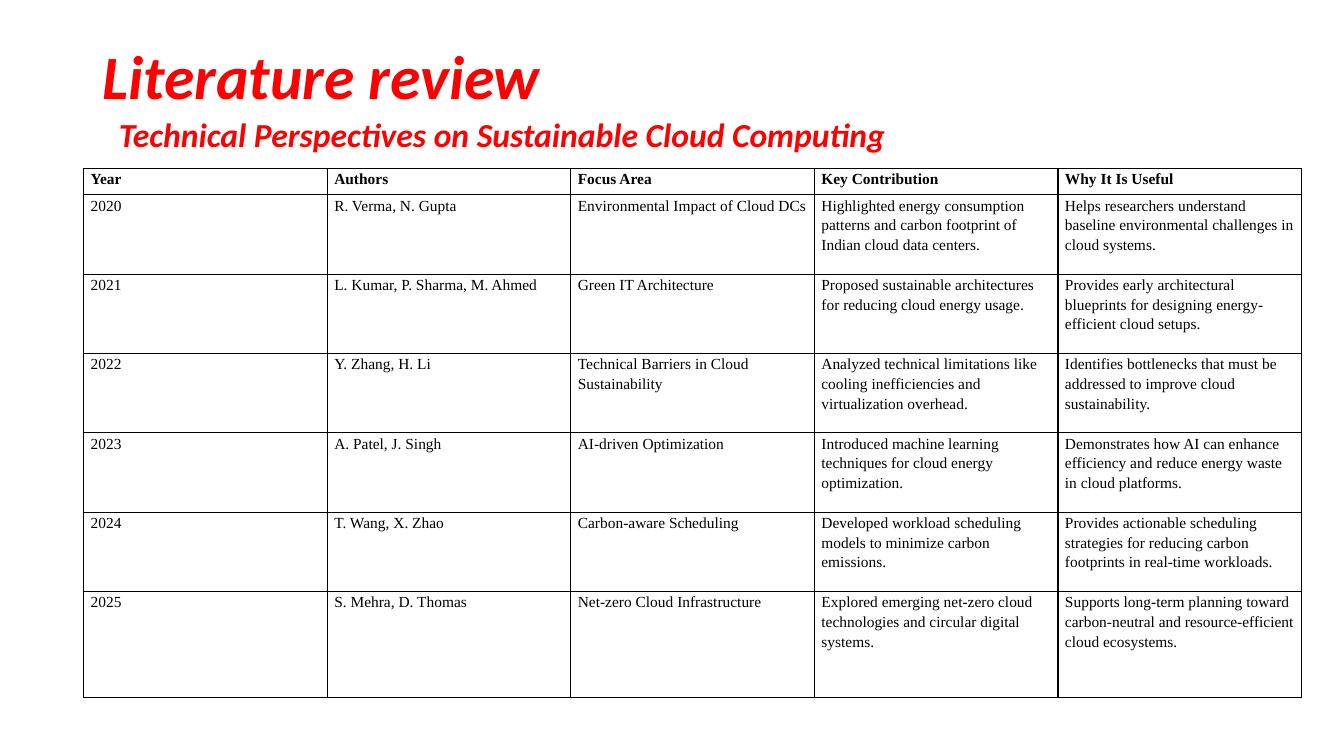
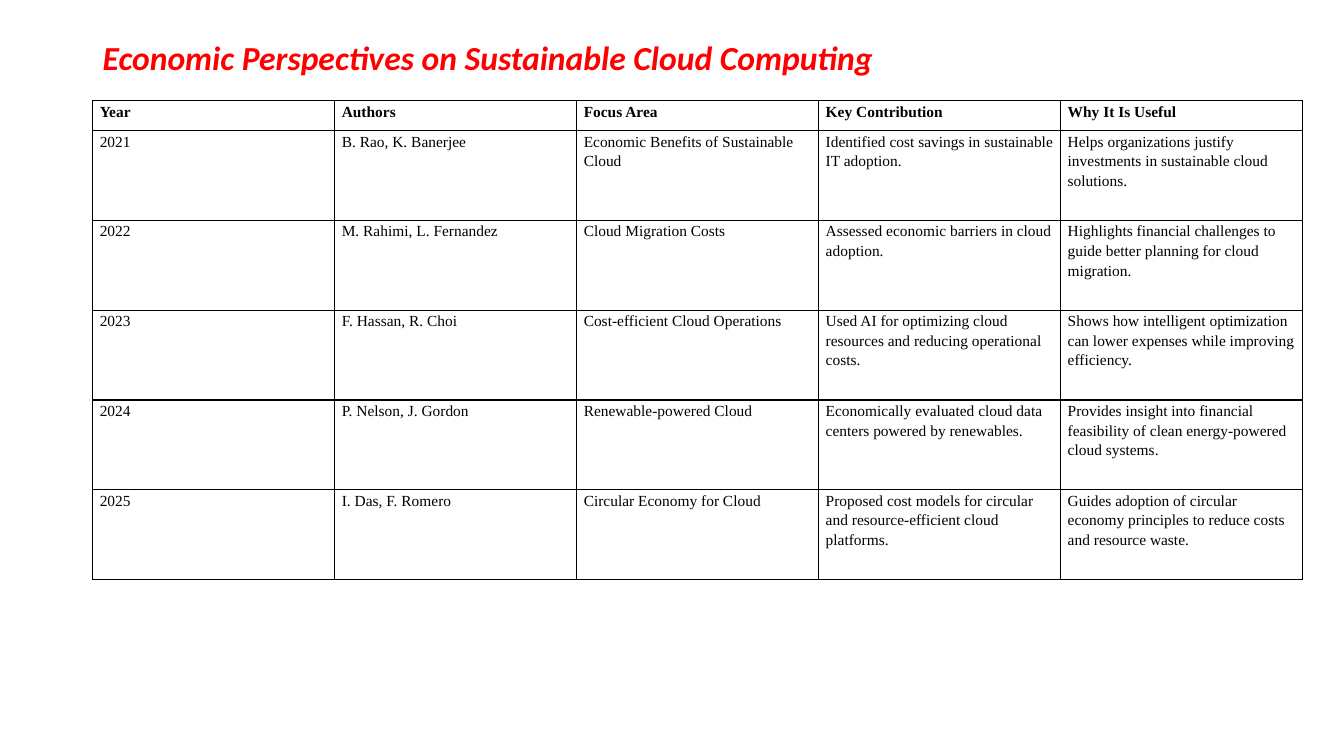
from lxml import etree
from pptx import Presentation
from pptx import util as u
from pptx.dml.color import RGBColor
from pptx.enum import text
from pptx.oxml.ns import qn

RED, BLACK, WHITE = "FF0000", "000000", "FFFFFF"
HEAD_FONT, BODY_FONT = "Calibri", "Times New Roman"
HEADER = ("Year", "Authors", "Focus Area", "Key Contribution", "Why It Is Useful")

TECHNICAL = [
    ("2020", "R. Verma, N. Gupta", "Environmental Impact of Cloud DCs",
     "Highlighted energy consumption patterns and carbon footprint of Indian cloud data centers.",
     "Helps researchers understand baseline environmental challenges in cloud systems."),
    ("2021", "L. Kumar, P. Sharma, M. Ahmed", "Green IT Architecture",
     "Proposed sustainable architectures for reducing cloud energy usage.",
     "Provides early architectural blueprints for designing energy-efficient cloud setups."),
    ("2022", "Y. Zhang, H. Li", "Technical Barriers in Cloud Sustainability",
     "Analyzed technical limitations like cooling inefficiencies and virtualization overhead.",
     "Identifies bottlenecks that must be addressed to improve cloud sustainability."),
    ("2023", "A. Patel, J. Singh", "AI-driven Optimization",
     "Introduced machine learning techniques for cloud energy optimization.",
     "Demonstrates how AI can enhance efficiency and reduce energy waste in cloud platforms."),
    ("2024", "T. Wang, X. Zhao", "Carbon-aware Scheduling",
     "Developed workload scheduling models to minimize carbon emissions.",
     "Provides actionable scheduling strategies for reducing carbon footprints in real-time workloads."),
    ("2025", "S. Mehra, D. Thomas", "Net-zero Cloud Infrastructure",
     "Explored emerging net-zero cloud technologies and circular digital systems.",
     "Supports long-term planning toward carbon-neutral and resource-efficient cloud ecosystems."),
]
ECONOMIC = [
    ("2021", "B. Rao, K. Banerjee", "Economic Benefits of Sustainable Cloud",
     "Identified cost savings in sustainable IT adoption.",
     "Helps organizations justify investments in sustainable cloud solutions."),
    ("2022", "M. Rahimi, L. Fernandez", "Cloud Migration Costs",
     "Assessed economic barriers in cloud adoption.",
     "Highlights financial challenges to guide better planning for cloud migration."),
    ("2023", "F. Hassan, R. Choi", "Cost-efficient Cloud Operations",
     "Used AI for optimizing cloud resources and reducing operational costs.",
     "Shows how intelligent optimization can lower expenses while improving efficiency."),
    ("2024", "P. Nelson, J. Gordon", "Renewable-powered Cloud",
     "Economically evaluated cloud data centers powered by renewables.",
     "Provides insight into financial feasibility of clean energy-powered cloud systems."),
    ("2025", "I. Das, F. Romero", "Circular Economy for Cloud",
     "Proposed cost models for circular and resource-efficient cloud platforms.",
     "Guides adoption of circular economy principles to reduce costs and resource waste."),
]


def rgb(color):
    return RGBColor.from_string(color)


def style(p, font, size, color, bold, italic=False, spacing=1.0):
    f = p.font
    f.name, f.size, f.bold, f.italic = font, u.Pt(size), bold, italic
    f.color.rgb = rgb(color)
    p.line_spacing = spacing


def heading(s, box, words, size, anchor=text.MSO_ANCHOR.MIDDLE, spacing=0.9):
    """Red bold italic heading inside box (left, top, width, height)."""
    tf = s.shapes.add_textbox(*map(u.Inches, box)).text_frame
    tf.word_wrap = True
    tf.vertical_anchor = anchor
    p = tf.paragraphs[0]
    p.text = words
    style(p, HEAD_FONT, size, RED, True, True, spacing)


def borders(cell, color, width):
    tcPr = cell._tc.get_or_add_tcPr()
    for side in ("lnL", "lnR", "lnT", "lnB"):
        ln = etree.SubElement(tcPr, qn("a:" + side), w=str(u.Pt(width)))
        fill = etree.SubElement(ln, qn("a:solidFill"))
        etree.SubElement(fill, qn("a:srgbClr"), val=color)


def review_table(s, box, records, shares):
    """Bordered table: equal columns, row heights in proportion to shares."""
    rows = [HEADER] + records
    x, y, w, h = map(u.Inches, box)
    table = s.shapes.add_table(len(rows), len(HEADER), x, y, w, h).table
    for col in table.columns:
        col.width = w // len(HEADER)
    for i, (row, share) in enumerate(zip(rows, shares)):
        table.rows[i].height = h * share // sum(shares)
        for j, words in enumerate(row):
            cell = table.cell(i, j)
            borders(cell, BLACK, 1)
            cell.fill.solid()
            cell.fill.fore_color.rgb = rgb(WHITE)
            cell.margin_left = cell.margin_right = u.Inches(0.07)
            cell.margin_top = cell.margin_bottom = 0
            p = cell.text_frame.paragraphs[0]
            p.text = words
            style(p, BODY_FONT, 11, BLACK, i == 0, spacing=1.15)


def technical_slide(s):
    heading(s, (0.92, 0.4, 11.5, 0.77), "Literature review", 44)
    review_table(s, (0.83, 1.67, 12.08, 5.25), TECHNICAL, [1] + [3] * 5 + [4])
    heading(s, (1.08, 1.08, 10.5, 0.5), "Technical Perspectives on Sustainable Cloud Computing",
            24, text.MSO_ANCHOR.TOP, 1.0)


def economic_slide(s):
    heading(s, (0.92, 0.17, 11.5, 0.85), "Economic Perspectives on Sustainable Cloud Computing", 24)
    review_table(s, (0.92, 1, 12, 4.75), ECONOMIC, [1] + [3] * 5)


def main():
    prs = Presentation()
    prs.slide_width, prs.slide_height = u.Inches(13.33), u.Inches(7.5)
    for build in (technical_slide, economic_slide):
        build(prs.slides.add_slide(prs.slide_layouts[6]))
    prs.save("out.pptx")


if __name__ == "__main__":
    main()
